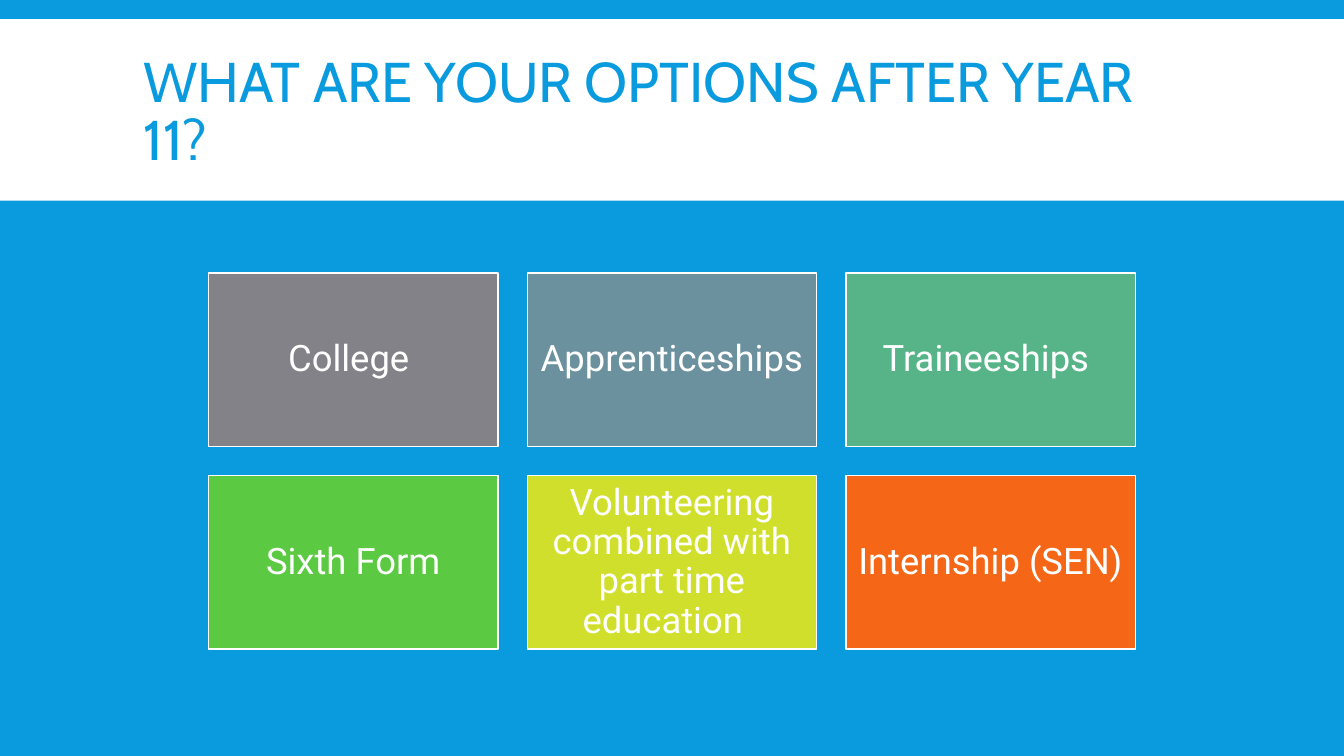
from pptx import Presentation
from pptx.dml.color import RGBColor
from pptx.enum.shapes import MSO_SHAPE
from pptx.enum.text import MSO_ANCHOR, MSO_AUTO_SIZE, PP_ALIGN
from pptx.util import Inches, Pt

BLUE = RGBColor(0x09, 0x9B, 0xDD)
WHITE = RGBColor(0xFF, 0xFF, 0xFF)
GREY = RGBColor(0x82, 0x82, 0x88)
SLATE = RGBColor(0x6C, 0x91, 0x9E)
TEAL = RGBColor(0x57, 0xB4, 0x89)
GREEN = RGBColor(0x5B, 0xCA, 0x42)
LIME = RGBColor(0xD0, 0xDF, 0x2C)
ORANGE = RGBColor(0xF5, 0x66, 0x17)

TITLE = "WHAT ARE YOUR OPTIONS AFTER YEAR 11?"
OPTIONS = [
    ("College ", GREY),
    ("Apprenticeships ", SLATE),
    ("Traineeships ", TEAL),
    (" Sixth Form ", GREEN),
    ("Volunteering combined with part time education  ", LIME),
    ("Internship (SEN)", ORANGE),
]
COLUMNS = 3
GRID_LEFT, GRID_TOP = 2.07, 2.71
CARD_W, CARD_H, GAP = 2.87, 1.72, 0.29
INSET = Inches(0.11)


def add_box(s, left, top, width, height, fill):
    sp = s.shapes.add_shape(MSO_SHAPE.RECTANGLE, Inches(left), Inches(top),
                            Inches(width), Inches(height))
    sp.shadow.inherit = False
    sp.fill.solid()
    sp.fill.fore_color.rgb = fill
    sp.line.fill.background()
    return sp


def set_text(sp, text, font, size, color, align, spacing):
    tf = sp.text_frame
    tf.text = text
    tf.word_wrap = True
    tf.auto_size = MSO_AUTO_SIZE.NONE
    tf.vertical_anchor = MSO_ANCHOR.MIDDLE
    p = tf.paragraphs[0]
    p.alignment = align
    p.line_spacing = spacing
    r = p.runs[0]
    r.font.name = font
    r.font.size = Pt(size)
    r.font.color.rgb = color
    return tf


def add_card(s, index, text, fill):
    row, col = divmod(index, COLUMNS)
    sp = add_box(s, GRID_LEFT + col * (CARD_W + GAP),
                 GRID_TOP + row * (CARD_H + GAP), CARD_W, CARD_H, fill)
    sp.line.color.rgb = WHITE
    sp.line.width = Pt(1)
    tf = set_text(sp, text, "Roboto", 26, WHITE, PP_ALIGN.CENTER, 0.9)
    tf.margin_left = tf.margin_right = INSET
    tf.margin_top = tf.margin_bottom = INSET


def main():
    prs = Presentation()
    prs.slide_width, prs.slide_height = Inches(13.33), Inches(7.5)
    s = prs.slides.add_slide(prs.slide_layouts[5])
    s.background.fill.solid()
    s.background.fill.fore_color.rgb = BLUE

    band = add_box(s, 0, 0.19, 13.33, 1.8, WHITE)
    title = s.shapes.title
    title.left, title.top = Inches(1.32), Inches(0.31)
    title.width, title.height = Inches(10.7), Inches(1.65)
    set_text(title, TITLE, "Cabin", 40, BLUE, PP_ALIGN.LEFT, 0.85)
    title.element.addprevious(band.element)

    for index, (text, fill) in enumerate(OPTIONS):
        add_card(s, index, text, fill)
    prs.save("out.pptx")


if __name__ == "__main__":
    main()
